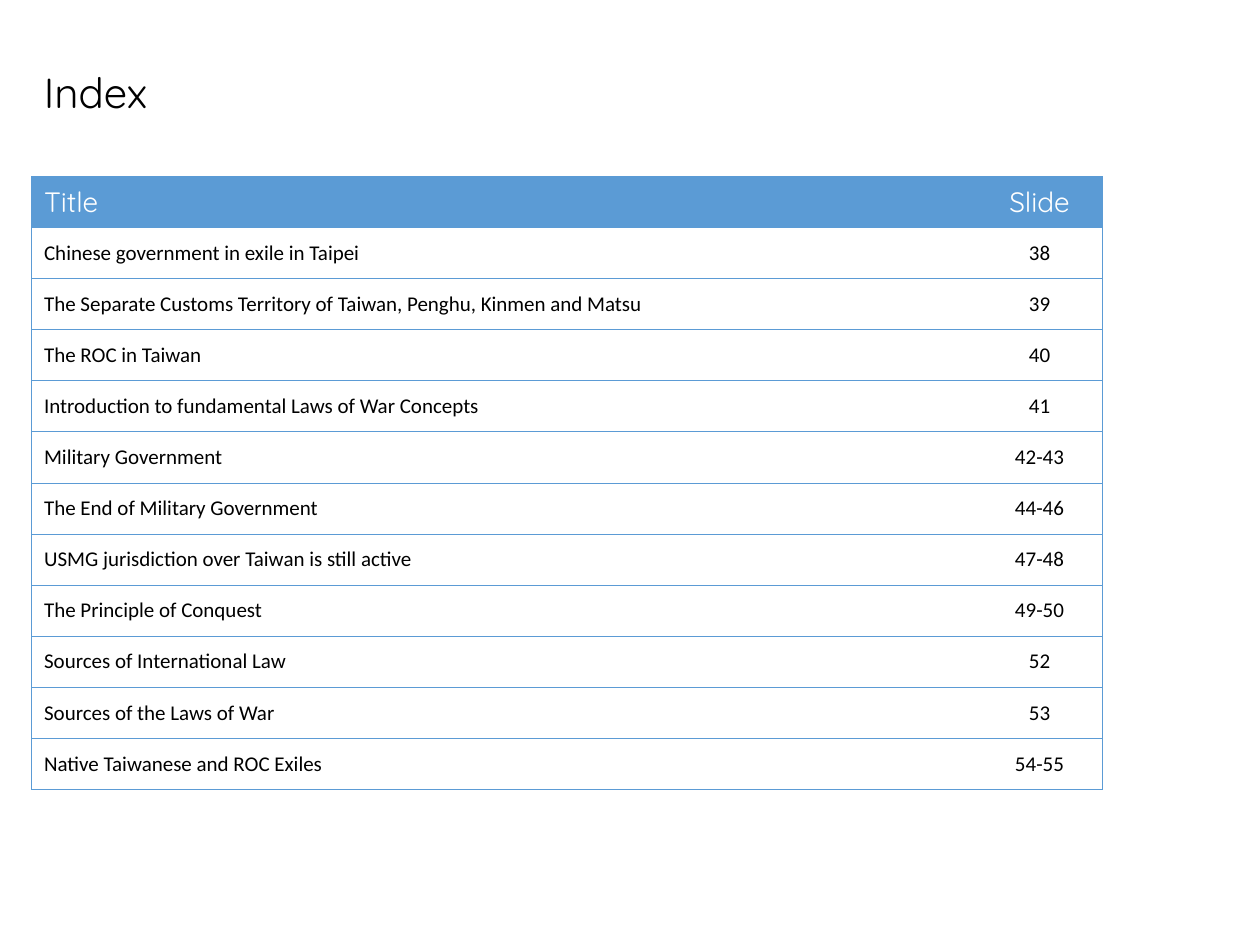
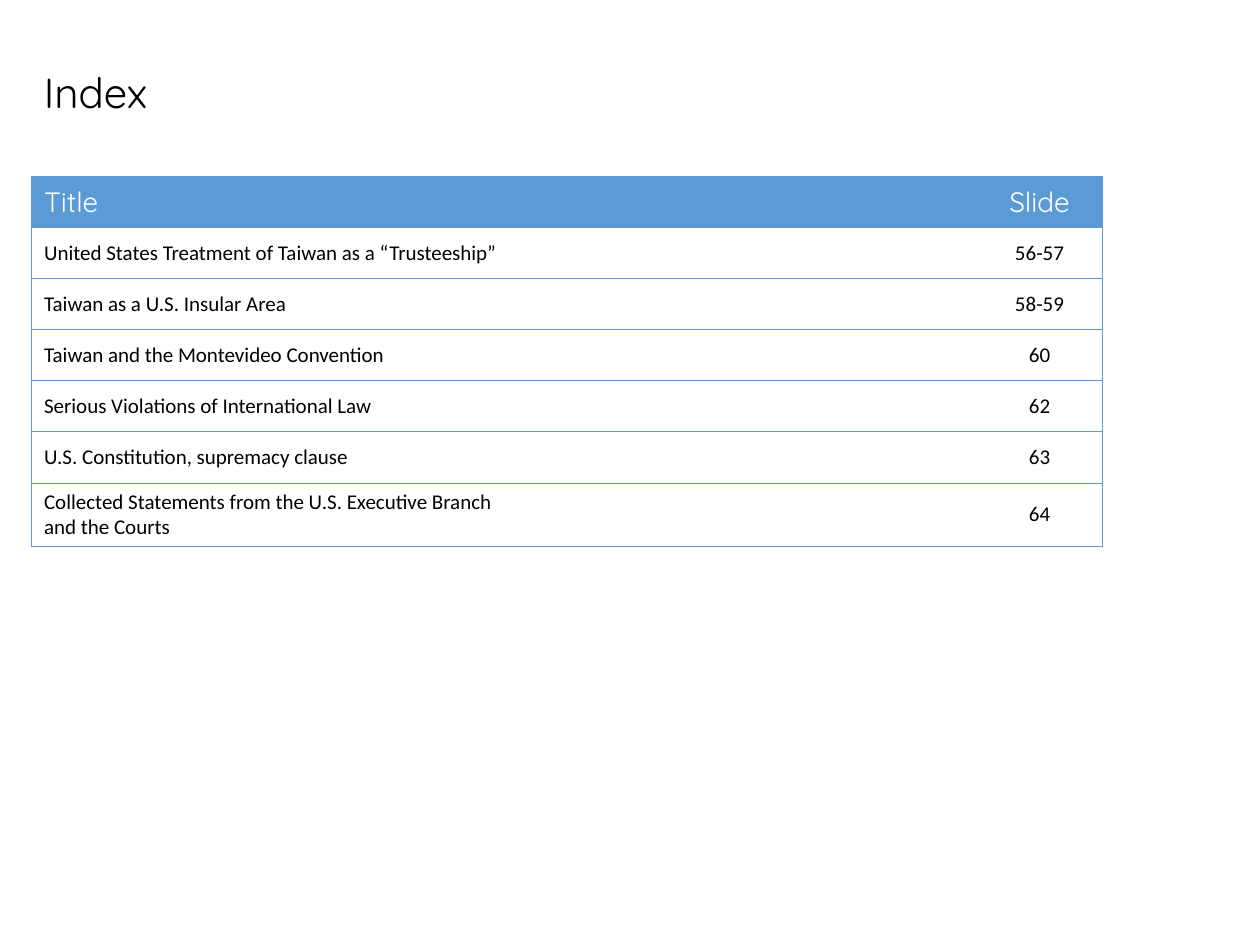
"""Build the two index slides, each a title over a table of topics and slide numbers."""
from lxml.etree import SubElement
from pptx import Presentation
from pptx.dml.color import RGBColor
from pptx.enum.text import MSO_ANCHOR, PP_ALIGN
from pptx.oxml.ns import qn
from pptx.util import Inches, Pt

BLUE = RGBColor(0x5B, 0x9B, 0xD5)
BLACK = RGBColor(0x00, 0x00, 0x00)
WHITE = RGBColor(0xFF, 0xFF, 0xFF)

TITLE_FONT = {"name": "Quicksand", "size": Pt(24)}
HEAD_FONT = {"name": "Quicksand", "size": Pt(16)}
BODY_FONT = {"name": "Calibri", "size": Pt(12)}

HEADER = ("Title", "Slide")
INDEX_PAGES = [
    [
        ("Chinese government in exile in Taipei", "38"),
        ("The Separate Customs Territory of Taiwan, Penghu, Kinmen and Matsu", "39"),
        ("The ROC in Taiwan", "40"),
        ("Introduction to fundamental Laws of War Concepts", "41"),
        ("Military Government", "42-43"),
        ("The End of Military Government", "44-46"),
        ("USMG jurisdiction over Taiwan is still active", "47-48"),
        ("The Principle of Conquest", "49-50"),
        ("Sources of International Law", "52"),
        ("Sources of the Laws of War", "53"),
        ("Native Taiwanese and ROC Exiles", "54-55"),
    ],
    [
        ("United States Treatment of Taiwan as a “Trusteeship”", "56-57"),
        ("Taiwan as a U.S. Insular Area", "58-59"),
        ("Taiwan and the Montevideo Convention", "60"),
        ("Serious Violations of International Law", "62"),
        ("U.S. Constitution, supremacy clause", "63"),
        ("Collected Statements from the U.S. Executive Branch\vand the Courts", "64"),
    ],
]


def style_text(p, font, color):
    for r in p.runs:
        for key, value in font.items():
            setattr(r.font, key, value)
        r.font.color.rgb = color


def set_borders(cell, visible):
    tc_pr = cell._tc.get_or_add_tcPr()
    for side in "LRTB":
        ln = SubElement(tc_pr, qn(f"a:ln{side}"), w=str(Pt(0.5)))
        if side in visible:
            fill = SubElement(ln, qn("a:solidFill"))
            SubElement(fill, qn("a:srgbClr"), val=str(BLUE))
        else:
            SubElement(ln, qn("a:noFill"))


prs = Presentation()
prs.slide_width, prs.slide_height = Inches(10), Inches(7.5)
COL = prs.slide_width // 40
ROW = Inches(4.87) // 12
TABLE_TOP = Inches(1.4)

for entries in INDEX_PAGES:
    s = prs.slides.add_slide(prs.slide_layouts[6])

    tf = s.shapes.add_textbox(COL, COL, 34 * COL, 4 * COL).text_frame
    tf.word_wrap = True
    tf.vertical_anchor = MSO_ANCHOR.MIDDLE
    p = tf.paragraphs[0]
    p.text = "Index"
    p.line_spacing = 0.9
    style_text(p, TITLE_FONT, BLACK)

    rows = [HEADER, *entries]
    table = s.shapes.add_table(len(rows), 2, COL, TABLE_TOP, 34 * COL, ROW * len(rows)).table
    table.horz_banding = False
    table.columns[0].width, table.columns[1].width = 30 * COL, 4 * COL

    for i, row in enumerate(rows):
        table.rows[i].height = ROW
        for j, text in enumerate(row):
            cell = table.cell(i, j)
            set_borders(cell, "LTB" if j == 0 else "RTB")
            cell.vertical_anchor = MSO_ANCHOR.MIDDLE
            cell.text = text
            p = cell.text_frame.paragraphs[0]
            p.alignment = PP_ALIGN.CENTER if j else PP_ALIGN.LEFT
            if i == 0:
                cell.fill.solid()
                cell.fill.fore_color.rgb = BLUE
                style_text(p, {**HEAD_FONT, "bold": False}, WHITE)
            else:
                cell.fill.background()
                style_text(p, BODY_FONT, BLACK)

prs.save("out.pptx")
